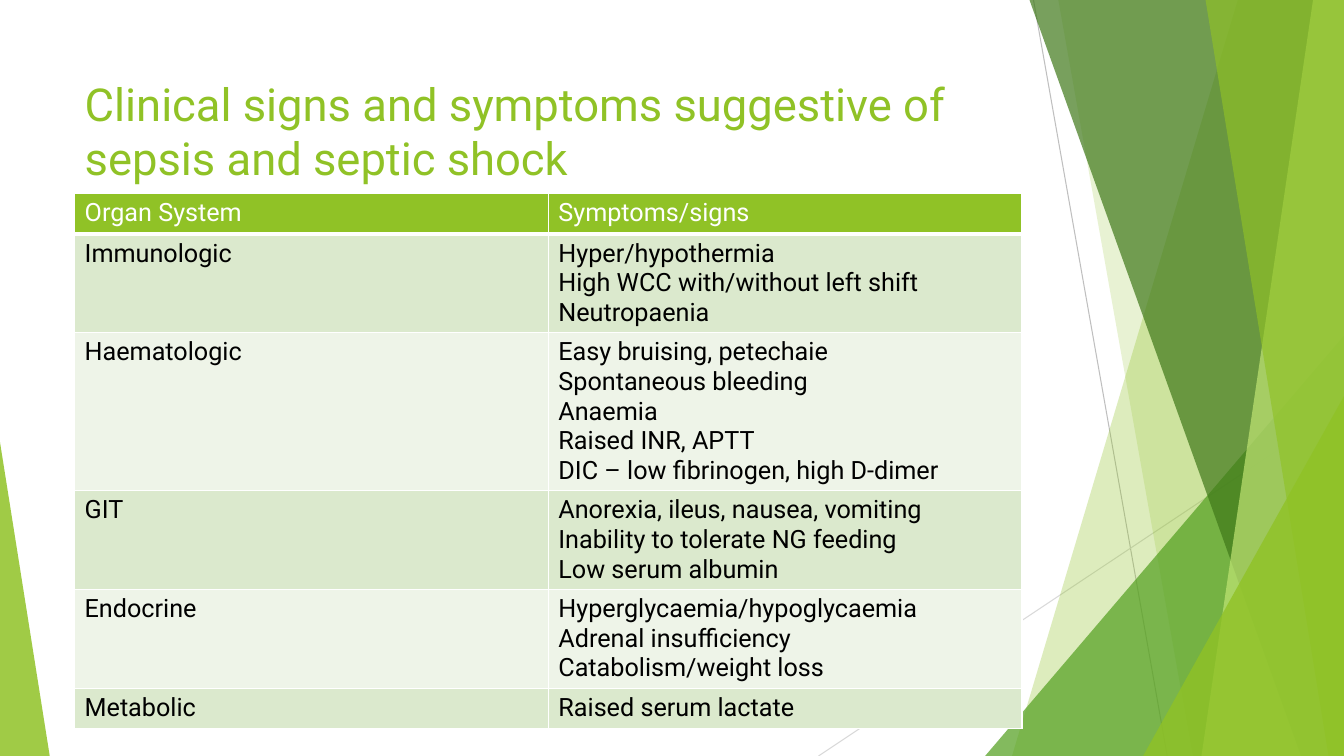
import dataclasses
import lxml.etree
import pptx
import pptx.dml.color
import pptx.enum.shapes
import pptx.enum.text
import pptx.oxml.ns
import pptx.util


@dataclasses.dataclass(frozen=True)
class Theme:
    font: str = "Roboto"
    title: float = 32.4
    body: float = 18
    lime: str = "90C226"
    pale: str = "C0E474"
    green: str = "54A021"
    dark: str = "3F7819"
    white: str = "FFFFFF"
    black: str = "000000"
    near: str = "BFBFBF"
    far: str = "D9D9D9"
    bands: tuple = ("DBE9CD", "EEF4E8")


THEME = Theme()
WIDE, HIGH = pptx.util.Inches(13.333), pptx.util.Inches(7.5)

# Boxes are left, top, width, height in percent of the slide.
FULL_BOX = (0, 0, 100, 100)
TITLE_BOX = (5.55, 8.9, 70.5, 16.7)
TABLE_BOX = (5.55, 25.6, 70.5, 70.62)
LINE_PART, PAD_PART = 3.87, 1.45  # height of a text line and of a row's margins

TITLE = "Clinical signs and symptoms suggestive of sepsis and septic shock"
ROWS = [
    ("Organ System", ["Symptoms/signs"]),
    ("Immunologic", ["Hyper/hypothermia", "High WCC with/without left shift",
                     "Neutropaenia"]),
    ("Haematologic", ["Easy bruising, petechaie", "Spontaneous bleeding", "Anaemia",
                      "Raised INR, APTT", "DIC – low fibrinogen, high D-dimer"]),
    ("GIT", ["Anorexia, ileus, nausea, vomiting", "Inability to tolerate NG feeding",
             "Low serum albumin"]),
    ("Endocrine", ["Hyperglycaemia/hypoglycaemia", "Adrenal insufficiency",
                   "Catabolism/weight loss"]),
    ("Metabolic", ["Raised serum lactate"]),
]

# Rays: x1, y1, x2, y2, colour
RAYS = [(76.9, 0, 86.85, 100, THEME.near), (100, 53.7, 60.9, 100, THEME.far)]
# Blades reach the right edge: top x, bottom x, colour, opacity
BACK_BLADES = [(92.1, 75.3, THEME.lime, 30), (78.75, 88.75, THEME.lime, 20)]
FRONT_BLADES = [(76.6, 96.8, THEME.dark, 70), (97.7, 89.4, THEME.pale, 70),
                (89.7, 98.85, THEME.lime, 65)]
# Wedges stand on the bottom edge: left, top, width, peak, colour, opacity
BACK_WEDGE = (73.3, 44.4, 26.7, 1, THEME.green, 72)
FRONT_WEDGES = [(85.05, 52.4, 14.95, 1, THEME.lime, 80),
                (0, 58.5, 3.7, 0, THEME.lime, 85)]


def rgb(code):
    return pptx.dml.color.RGBColor.from_string(code)


def scale(box):
    """Turn a box in percent into slide lengths."""
    return [round(part * size / 100) for part, size in zip(box, (WIDE, HIGH) * 2)]


def place(box, x, y):
    """Give the slide point at x, y percent of a box."""
    left, top, width, height = scale(box)
    return round(left + width * x / 100), round(top + height * y / 100)


def add_tag(parent, name, **attrs):
    tag = lxml.etree.SubElement(parent, pptx.oxml.ns.qn(name))
    for key, value in attrs.items():
        tag.set(key, str(value))
    return tag


def style(frame, size, code):
    for para in frame.paragraphs:
        for run in para.runs:
            run.font.name = THEME.font
            run.font.size = pptx.util.Pt(size)
            run.font.color.rgb = rgb(code)


def paint(shape, code, alpha):
    shape.shadow.inherit = False
    shape.line.fill.background()
    shape.fill.solid()
    shape.fill.fore_color.rgb = rgb(code)
    tint = next(shape.fill._xPr.iter(pptx.oxml.ns.qn("a:srgbClr")))
    add_tag(tint, "a:alpha", val=alpha * 1000)


def add_ray(slide, box, x1, y1, x2, y2, code):
    ray = slide.shapes.add_connector(pptx.enum.shapes.MSO_CONNECTOR.STRAIGHT,
                                     *place(box, x1, y1), *place(box, x2, y2))
    ray.line.color.rgb = rgb(code)
    ray.line.width = pptx.util.Pt(0.75)
    add_tag(ray._element.spPr, "a:effectLst")


def add_blade(slide, box, top, base, code, alpha):
    start, *rest = [place(box, x, y)
                    for x, y in ((top, 0), (100, 0), (100, 100), (base, 100))]
    pen = slide.shapes.build_freeform(*start)
    pen.add_line_segments(rest, close=True)
    paint(pen.convert_to_shape(), code, alpha)


def add_wedge(slide, box, left, top, width, peak, code, alpha):
    x1, y1 = place(box, left, top)
    x2, y2 = place(box, left + width, 100)
    kind = pptx.enum.shapes.MSO_SHAPE.ISOSCELES_TRIANGLE
    wedge = slide.shapes.add_shape(kind, x1, y1, x2 - x1, y2 - y1)
    wedge.adjustments[0] = peak
    paint(wedge, code, alpha)


def add_decor(slide, box):
    for ray in RAYS:
        add_ray(slide, box, *ray)
    for blade in BACK_BLADES:
        add_blade(slide, box, *blade)
    add_wedge(slide, box, *BACK_WEDGE)
    for blade in FRONT_BLADES:
        add_blade(slide, box, *blade)
    for wedge in FRONT_WEDGES:
        add_wedge(slide, box, *wedge)


def set_title(slide, box):
    """Fill the title and bring it in front of the decor."""
    title = slide.shapes.title
    title.left, title.top, title.width, title.height = scale(box)
    frame = title.text_frame
    frame.text = TITLE
    frame.word_wrap = True
    frame.auto_size = pptx.enum.text.MSO_AUTO_SIZE.NONE
    frame.vertical_anchor = pptx.enum.text.MSO_ANCHOR.MIDDLE
    frame.paragraphs[0].alignment = pptx.enum.text.PP_ALIGN.LEFT
    style(frame, THEME.title, THEME.lime)
    slide.shapes._spTree.append(title._element)


def fill_cell(cell, text, code, fill, base):
    """Set a cell's text, borders and fill; base is its bottom border in points."""
    cell.text_frame.text = text
    style(cell.text_frame, THEME.body, code)
    props = cell._tc.get_or_add_tcPr()
    for side, width in (("L", 1), ("R", 1), ("T", 1), ("B", base)):
        edge = add_tag(props, "a:ln" + side, w=pptx.util.Pt(width))
        add_tag(add_tag(edge, "a:solidFill"), "a:srgbClr", val=THEME.white)
    cell.fill.solid()
    cell.fill.fore_color.rgb = rgb(fill)


def add_signs(slide, box):
    """Add the table of organ systems, each row as high as its lines."""
    table = slide.shapes.add_table(len(ROWS), 2, *scale(box)).table
    for index, (organ, signs) in enumerate(ROWS):
        share = PAD_PART + LINE_PART * len(signs)
        table.rows[index].height = round(HIGH * share / 100)
        if index == 0:
            look = (THEME.white, THEME.lime, 3)
        else:
            look = (THEME.black, THEME.bands[(index - 1) % 2], 1)
        for column, text in enumerate((organ, "\n".join(signs))):
            cell = table.cell(index, column)
            fill_cell(cell, text, *look)
            if index == 0:
                for run in cell.text_frame.paragraphs[0].runs:
                    run.font.bold = False


def main():
    deck = pptx.Presentation()
    deck.slide_width, deck.slide_height = WIDE, HIGH
    slide = deck.slides.add_slide(deck.slide_layouts.get_by_name("Title Only"))
    add_decor(slide, FULL_BOX)
    set_title(slide, TITLE_BOX)
    add_signs(slide, TABLE_BOX)
    deck.save("out.pptx")


if __name__ == "__main__":
    main()
